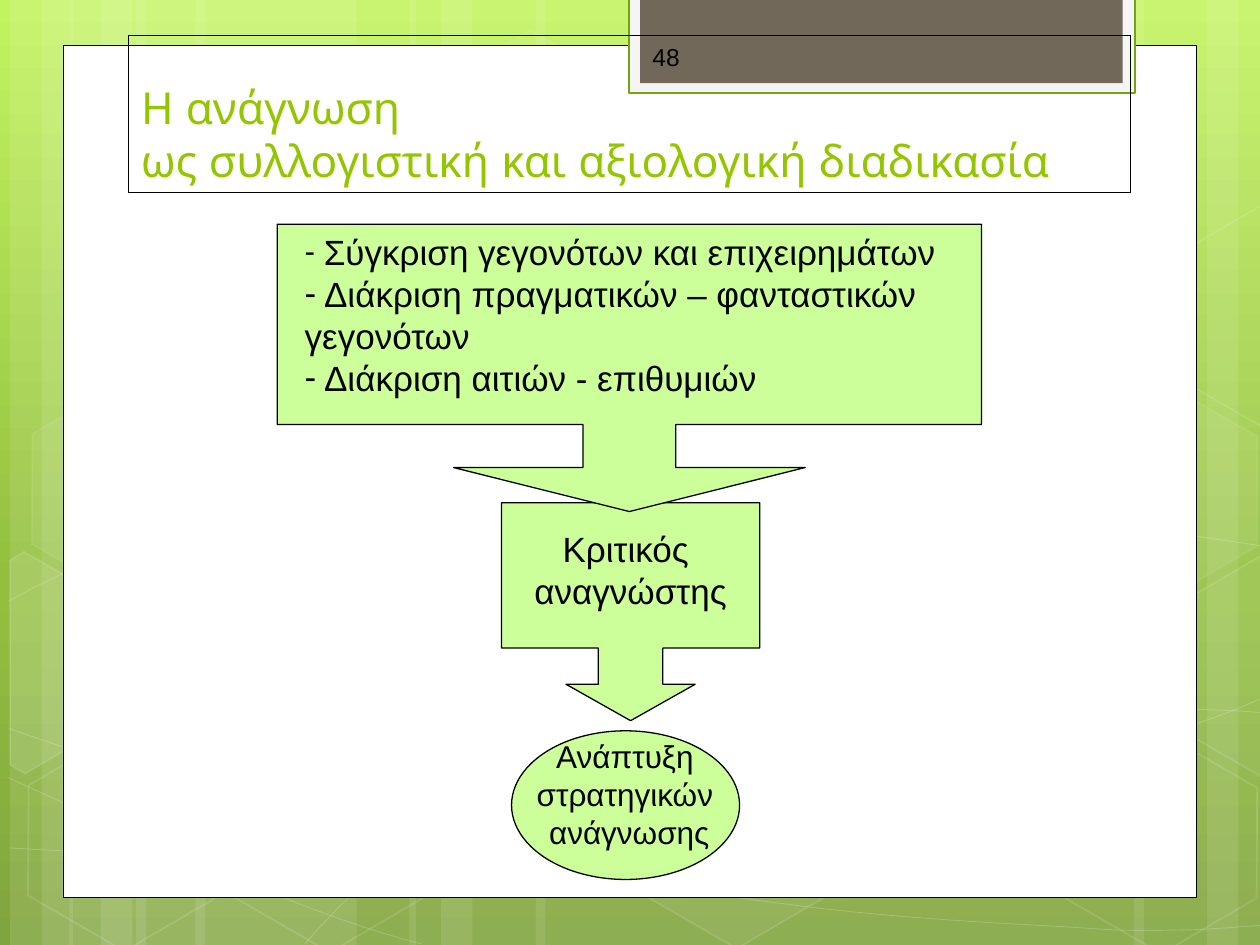
import copy
import typing

import pptx
import pptx.dml.color
import pptx.enum.shapes
import pptx.enum.text
import pptx.oxml
import pptx.oxml.ns
import pptx.util

PRESETS = pptx.enum.shapes.MSO_SHAPE
ALIGN = pptx.enum.text.PP_ALIGN
ANCHOR = pptx.enum.text.MSO_ANCHOR
WIDTH, HEIGHT = pptx.util.Inches(10), pptx.util.Inches(7.5)
COLUMN, ROW = WIDTH / 10, HEIGHT / 7.5
NAMESPACE = pptx.oxml.ns.nsdecls("a")
LIME = "CCFF99"


class Box(typing.NamedTuple):
    left: float
    top: float
    width: float
    height: float

    def inner(self, left, top, width, height):
        return Box(self.left + left, self.top + top, width, height)

    def lengths(self):
        return [round(value * unit) for value, unit in zip(self, (COLUMN, ROW, COLUMN, ROW))]


def colour(value):
    return pptx.dml.color.RGBColor.from_string(value)


def set_alpha(fill_element, percent):
    alpha = pptx.oxml.parse_xml(f'<a:alpha {NAMESPACE} val="{percent * 1000}"/>')
    fill_element.find(".//" + pptx.oxml.ns.qn("a:srgbClr")).append(alpha)


def paint(shape, fill=None, line=None, line_width=0.75, fill_alpha=100, line_alpha=100):
    shape.shadow.inherit = False
    if fill:
        shape.fill.solid()
        shape.fill.fore_color.rgb = colour(fill)
        if fill_alpha < 100:
            set_alpha(shape._element.spPr.find(pptx.oxml.ns.qn("a:solidFill")), fill_alpha)
    else:
        shape.fill.background()
    if line:
        shape.line.width = pptx.util.Pt(line_width)
        shape.line.color.rgb = colour(line)
        if line_alpha < 100:
            set_alpha(shape._element.spPr.find(pptx.oxml.ns.qn("a:ln")), line_alpha)
    else:
        shape.line.fill.background()


def add_preset(slide, preset, box, adjustments=(), **style):
    shape = slide.shapes.add_shape(preset, *box.lengths())
    for index, value in enumerate(adjustments):
        shape.adjustments[index] = value
    paint(shape, **style)
    return shape


def add_outline(slide, box, points, close, **style):
    corners = [(round((box.left + x) * COLUMN), round((box.top + y) * ROW)) for x, y in points]
    builder = slide.shapes.build_freeform(*corners[0])
    builder.add_line_segments(corners[1:], close=close)
    shape = builder.convert_to_shape()
    paint(shape, **style)
    return shape


def bend_segments(shape):
    segments = list(shape._element.iter(pptx.oxml.ns.qn("a:lnTo")))
    for start in range(0, len(segments), 3):
        bend = pptx.oxml.parse_xml(f"<a:cubicBezTo {NAMESPACE}/>")
        segments[start].addprevious(bend)
        for segment in segments[start:start + 3]:
            bend.append(segment[0])
            segment.getparent().remove(segment)


def format_run(run, size, font="Arial", ink="000000"):
    run.font.size = pptx.util.Pt(size)
    run.font.name = font
    run.font.color.rgb = colour(ink)


def add_bullet(paragraph, character):
    properties = paragraph._p.get_or_add_pPr()
    properties.set("marL", "0")
    properties.set("indent", "0")
    for markup in (f'<a:buFont {NAMESPACE} typeface="Arial"/>',
                   f'<a:buChar {NAMESPACE} char="{character}"/>'):
        properties.append(pptx.oxml.parse_xml(markup))


def add_text(slide, box, lines, align=ALIGN.LEFT, wrap=True, anchor=ANCHOR.TOP, bullet=None):
    frame = slide.shapes.add_textbox(*box.lengths()).text_frame
    frame.word_wrap = wrap
    frame.vertical_anchor = anchor
    for index, runs in enumerate(lines):
        paragraph = frame.add_paragraph() if index else frame.paragraphs[0]
        paragraph.alignment = align
        if bullet:
            add_bullet(paragraph, bullet)
        for text, size in runs:
            run = paragraph.add_run()
            run.text = text
            format_run(run, size)


def add_gradient(slide):
    fill = slide.background.fill
    fill.gradient()
    fill.gradient_angle = 270
    stop_list = slide._element.find(".//" + pptx.oxml.ns.qn("a:gsLst"))
    stop_list.insert(1, copy.deepcopy(stop_list[0]))
    stops = ((0, "C3F35F"), (0.62, "93BF3F"), (1, "81A53E"))
    for stop, (position, value) in zip(fill.gradient_stops, stops):
        stop.position = position
        stop.color.rgb = colour(value)


def add_stripes(slide, box):
    stripes = {1.75: (1.08, 1.55, 7.33), 0.5: (0.08, 0.55, 9.58, 3.25),
               0.83: (0.33, 0.8, 9, 3.5), 3.08: (4.25,)}
    for width, lefts in stripes.items():
        for left in lefts:
            add_preset(slide, PRESETS.RECTANGLE, box.inner(left, 0, width, box.height),
                       fill="FFFFFF", fill_alpha=10)


def add_curves(slide, box):
    curves = (
        ((0.07, 6.73), (0.61, 6.76), (1.15, 6.79), (1.9, 6.78), (2.65, 6.77), (3.58, 6.75),
         (4.58, 6.65), (5.58, 6.55), (7, 6.36), (7.92, 6.17), (8.83, 5.98), (9.77, 5.68),
         (10.07, 5.51)),
        ((0.07, 4.77), (0.36, 4.61), (0.65, 4.46), (1.21, 4.31), (1.78, 4.16), (2.59, 3.94),
         (3.47, 3.87), (4.36, 3.8), (5.44, 3.79), (6.54, 3.87), (7.64, 3.95), (9.47, 4.26),
         (10.07, 4.34)),
        ((0.06, 6.17), (1.27, 6.72), (2.47, 7.27), (3.34, 7.49)),
        ((0.07, 5.78), (0.38, 5.89), (0.7, 6), (1.28, 6.16), (1.86, 6.31), (2.73, 6.56),
         (3.57, 6.73), (4.4, 6.9), (5.45, 7.08), (6.28, 7.18), (7.11, 7.29), (8, 7.33),
         (8.53, 7.36), (9.05, 7.4), (9.19, 7.38), (9.45, 7.38), (9.71, 7.37), (9.89, 7.35),
         (10.07, 7.34)),
        ((2.42, 7.49), (2.6, 7.29), (2.78, 7.09), (3.02, 6.91), (3.26, 6.73), (3.6, 6.53),
         (3.88, 6.39), (4.16, 6.25), (4.33, 6.19), (4.7, 6.09), (5.06, 5.99), (5.73, 5.85),
         (6.08, 5.78), (6.44, 5.71), (6.49, 5.71), (6.8, 5.69), (7.11, 5.66), (7.6, 5.63),
         (7.94, 5.62), (8.29, 5.61), (9.5, 5.61), (10.06, 5.66)),
    )
    for knots in curves:
        bend_segments(add_outline(slide, box, knots, False, line="FFFFFF",
                                  line_width=0.5, line_alpha=20))


def add_hexagons(slide, box):
    whole = ((3.34, 0.36, 4, 8), (4.97, 5.89, 6, 12), (0.11, 5.91, 0, 12), (0.14, 3.12, 7, 8),
             (1.74, 5.92, 0, 12), (7.53, 4.53, 10, 12), (8.34, 5.93, 0, 12), (8.34, 3.14, 7, 8))
    for left, top, fill_alpha, line_alpha in whole:
        hexagon = add_preset(slide, PRESETS.HEXAGON, box.inner(left, top, 1.75, 1.52),
                             (0.285, 1.155), fill="FFFFFF" if fill_alpha else None,
                             fill_alpha=fill_alpha, line="FFFFFF", line_width=1,
                             line_alpha=line_alpha)
        hexagon.rotation = 30
    right_edge = ((9.26, 2.07), (10.01, 1.63), (10.1, 1.68), (10.09, 3.35), (10.02, 3.39),
                  (9.26, 2.95))
    left_edge = ((0.08, 4.45), (0.19, 4.38), (0.96, 4.82), (0.95, 5.7), (0.2, 6.14), (0.08, 6.07))
    lower_edge = [(x, y + 2.78) for x, y in right_edge]
    for points, fill_alpha in ((left_edge, 10), (lower_edge, 4), (right_edge, 0)):
        add_outline(slide, box, points, True, fill="FFFFFF" if fill_alpha else None,
                    fill_alpha=fill_alpha, line="FFFFFF", line_width=1, line_alpha=12)


def add_panel(slide, box):
    add_preset(slide, PRESETS.RECTANGLE, box, fill="FFFFFF", line="000000", line_width=0.5)


def add_number_tab(slide, box):
    add_preset(slide, PRESETS.RECTANGLE, box, fill="F5F5F5", line="74A510", line_width=1.25)
    add_preset(slide, PRESETS.RECTANGLE, box.inner(0.09, 0, 3.83, 0.68), fill="71685A")


def move_to_master(slide, master):
    backdrop = [shape for shape in slide.shapes if not shape.is_placeholder]
    for index, shape in enumerate(backdrop):
        master.shapes._spTree.insert(2 + index, shape._element)


def add_title(slide, box, lines):
    title = slide.shapes.title
    title.left, title.top, title.width, title.height = box.lengths()
    title.line.color.rgb = colour("000000")
    title.line.width = pptx.util.Pt(0.75)
    frame = title.text_frame
    frame.auto_size = pptx.enum.text.MSO_AUTO_SIZE.NONE
    frame.vertical_anchor = ANCHOR.BOTTOM
    paragraph = frame.paragraphs[0]
    paragraph.alignment = ALIGN.LEFT
    for index, line in enumerate(lines):
        if index:
            paragraph.add_line_break()
        run = paragraph.add_run()
        run.text = line
        format_run(run, 25.2, "Quicksand", "94C600")
    slide.shapes._spTree.append(title._element)


def add_flow(slide, box):
    style = {"fill": LIME, "line": "000000"}
    add_preset(slide, PRESETS.OVAL, box.inner(1.86, 4.02, 1.81, 1.18), **style)
    add_preset(slide, PRESETS.DOWN_ARROW_CALLOUT, box.inner(1.78, 2.21, 2.05, 1.73),
               (0.296, 0.296, 0.167, 0.667), **style)
    add_preset(slide, PRESETS.DOWN_ARROW_CALLOUT, box.inner(0, 0, 5.59, 2.28),
               (0.323, 0.612, 0.153, 0.697), **style)


def add_flow_text(slide, box):
    add_text(slide, box.inner(0.12, 0, 5.83, 1.43),
             [[(" ", 18), ("Σύγκριση γεγονότων και επιχειρημάτων", 20)],
              [(" Διάκριση πραγματικών – φανταστικών γεγονότων", 20)],
              [(" Διάκριση αιτιών - επιθυμιών", 20)]], bullet="-")
    add_text(slide, box.inner(1.94, 2.36, 1.73, 0.77),
             [[("Κριτικός ", 20)], [("αναγνώστης", 20)]], ALIGN.CENTER, wrap=False)
    add_text(slide, box.inner(1.96, 4.02, 1.67, 1),
             [[("Ανάπτυξη ", 18)], [("στρατηγικών ", 18)], [("ανάγνωσης", 18)]],
             ALIGN.CENTER, wrap=False)


def main():
    presentation = pptx.Presentation()
    presentation.slide_width, presentation.slide_height = WIDTH, HEIGHT
    slide = presentation.slides.add_slide(presentation.slide_layouts[5])
    page = Box(0, 0, 10, 7.5)
    add_gradient(slide)
    for add_layer in (add_stripes, add_curves, add_hexagons):
        add_layer(slide, page)
    add_panel(slide, page.inner(0.5, 0.36, 9, 6.76))
    add_number_tab(slide, page.inner(4.99, -0.02, 4.02, 0.76))
    move_to_master(slide, presentation.slide_master)
    add_text(slide, page.inner(5.08, 0.25, 1.46, 0.4), [[("48", 14)]], anchor=ANCHOR.MIDDLE)
    flow = page.inner(2.2, 1.78, 5.59, 5.2)
    add_flow(slide, flow)
    add_title(slide, page.inner(1.02, 0.28, 7.95, 1.25),
              ["Η ανάγνωση ", "ως συλλογιστική και αξιολογική διαδικασία"])
    add_flow_text(slide, flow)
    presentation.save("out.pptx")


if __name__ == "__main__":
    main()
